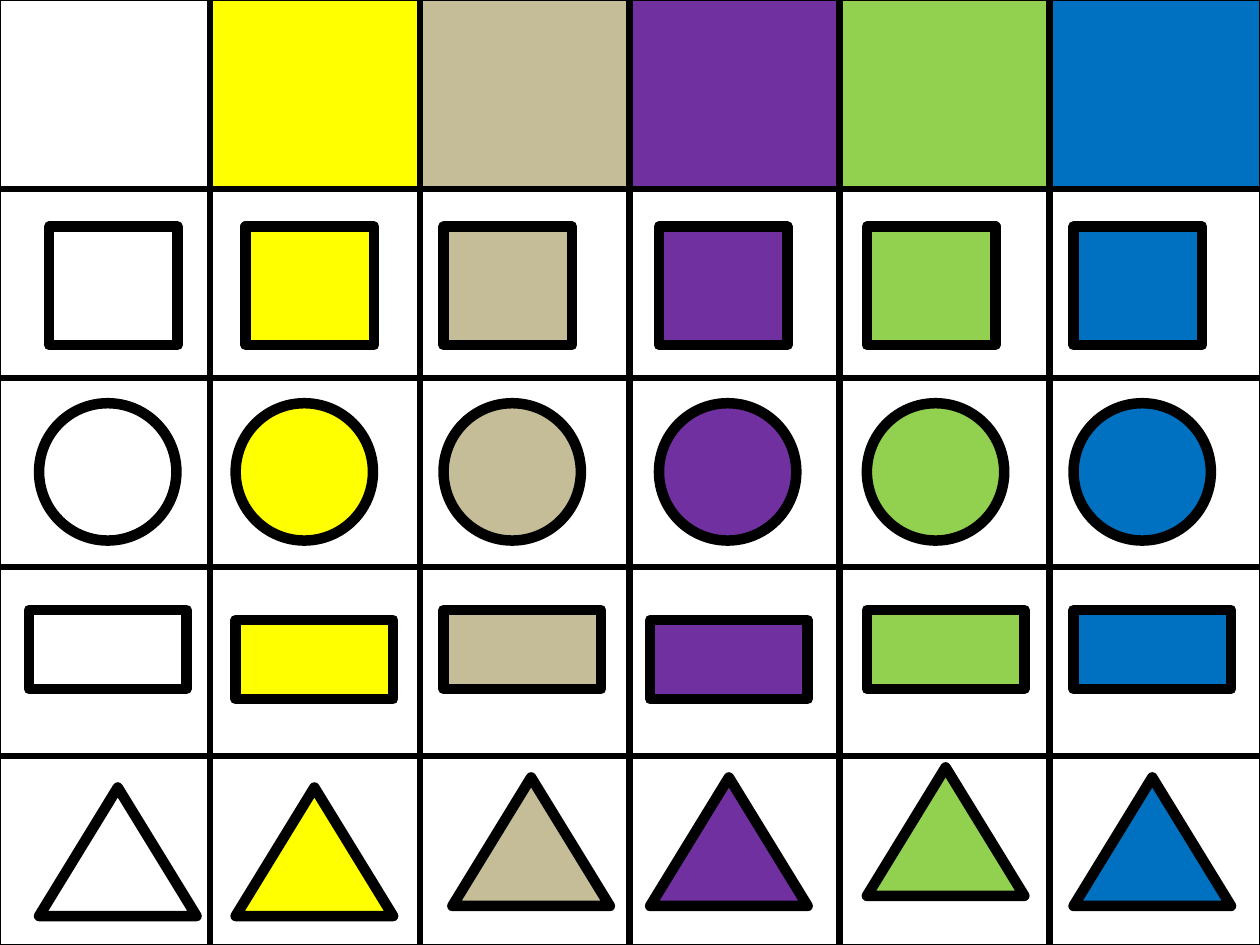
from lxml import etree
from pptx import Presentation
from pptx.dml.color import RGBColor
from pptx.enum.shapes import MSO_SHAPE as Shape
from pptx.oxml.ns import qn
from pptx.util import Inches, Pt

COLORS = [None, "FFFF00", "C4BD97", "7030A0", "92D050", "0070C0"]
BLACK = "000000"
ROWS = 5
SHAPE_ROWS = [
    (Shape.RECTANGLE, 1.02, 0.94,
     [0.39, 1.95, 3.52, 5.23, 6.88, 8.52], [1.8] * 6),
    (Shape.FLOWCHART_CONNECTOR, 1.09, 1.09,
     [0.31, 1.87, 3.52, 5.23, 6.88, 8.52], [3.2] * 6),
    (Shape.RECTANGLE, 1.25, 0.63,
     [0.23, 1.87, 3.52, 5.16, 6.88, 8.52], [4.84, 4.92, 4.84, 4.92, 4.84, 4.84]),
    (Shape.ISOSCELES_TRIANGLE, 1.25, 1.02,
     [0.31, 1.87, 3.59, 5.16, 6.88, 8.52], [6.25, 6.25, 6.17, 6.17, 6.09, 6.17]),
]


def paint(fill, color):
    if color is None:
        fill.background()
    else:
        fill.solid()
        fill.fore_color.rgb = RGBColor.from_string(color)


def add_border(cell, side, points):
    properties = cell._tc.get_or_add_tcPr()
    line = etree.SubElement(properties, qn(f"a:ln{side}"), w=str(Pt(points)))
    solid = etree.SubElement(line, qn("a:solidFill"))
    etree.SubElement(solid, qn("a:srgbClr"), val=BLACK)


deck = Presentation()
deck.slide_width = Inches(10)
deck.slide_height = Inches(7.5)
page = deck.slides.add_slide(deck.slide_layouts[6])

grid = page.shapes.add_table(
    ROWS, len(COLORS), 0, 0, deck.slide_width, deck.slide_height
).table
grid.first_row = False
grid.horz_banding = False

for row in range(ROWS):
    for column, color in enumerate(COLORS):
        cell = grid.cell(row, column)
        outer_sides = {
            "L": column == 0,
            "R": column == len(COLORS) - 1,
            "T": row == 0,
            "B": row == ROWS - 1,
        }
        for side, is_outer in outer_sides.items():
            add_border(cell, side, 1 if is_outer else 4.5)
        paint(cell.fill, color if row == 0 else None)

for kind, width, height, lefts, tops in SHAPE_ROWS:
    for color, left, top in zip(COLORS, lefts, tops):
        figure = page.shapes.add_shape(
            kind, Inches(left), Inches(top), Inches(width), Inches(height)
        )
        figure.shadow.inherit = False
        paint(figure.fill, color)
        paint(figure.line.fill, BLACK)
        figure.line.width = Pt(6)

deck.save("out.pptx")
